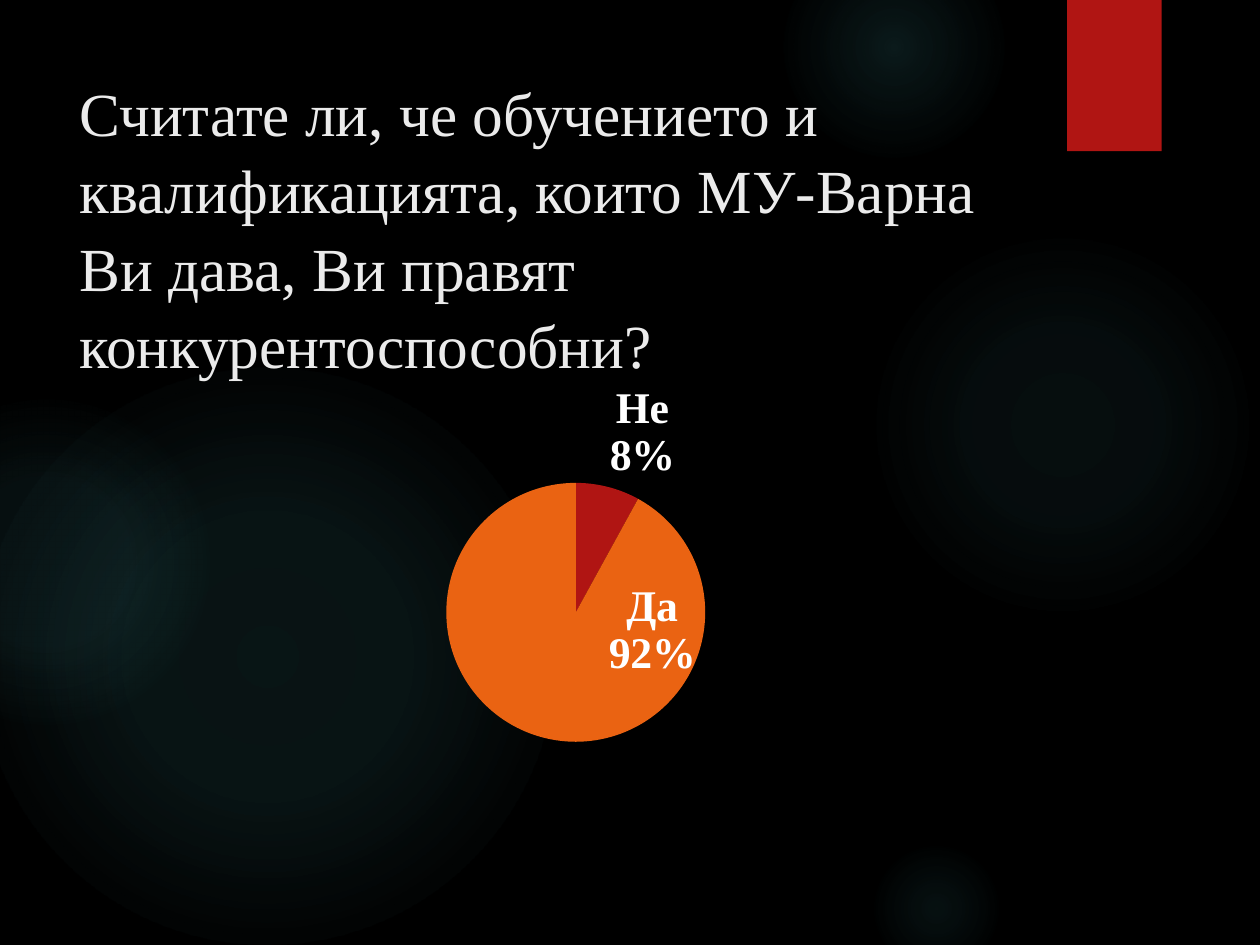
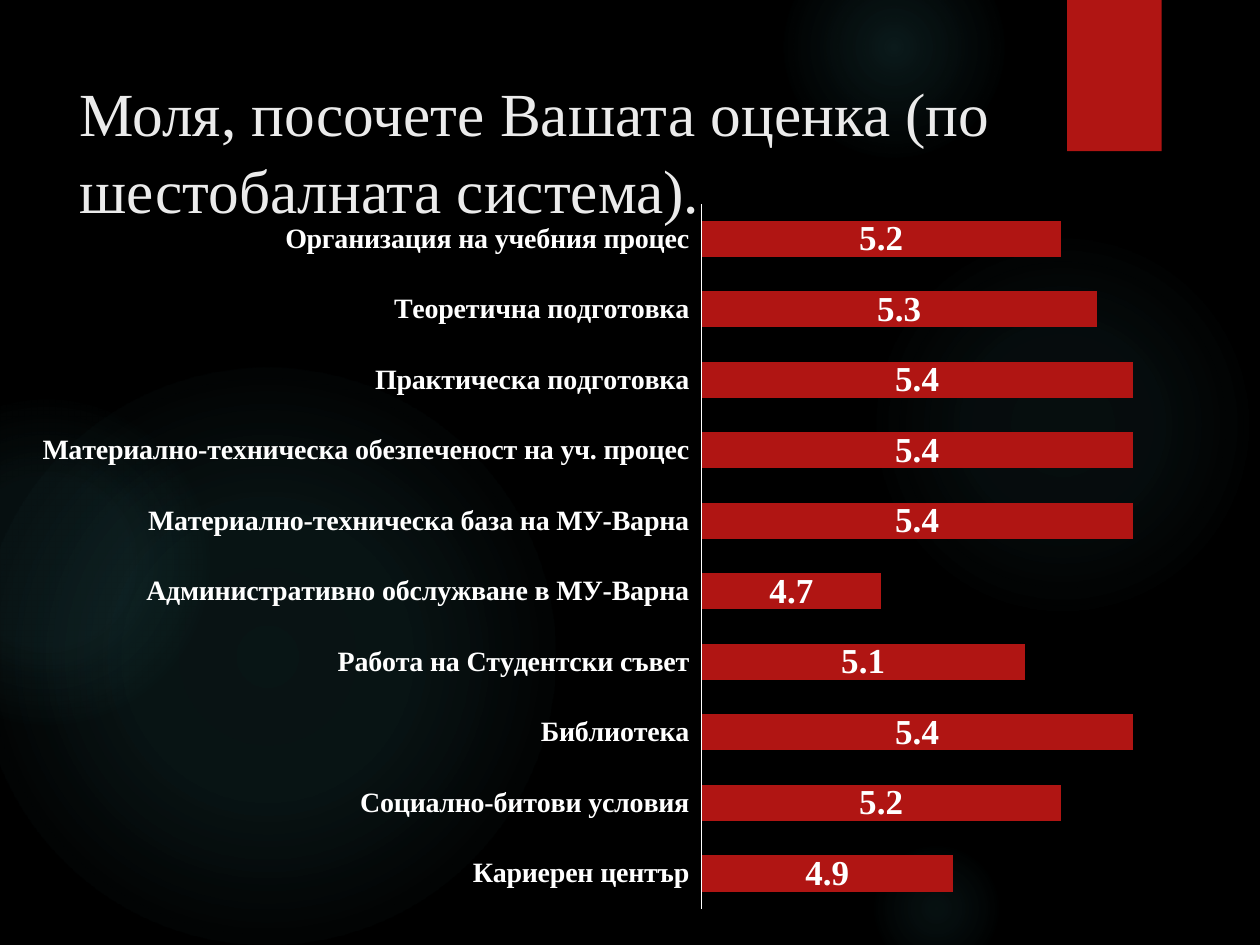
from pptx import Presentation
from pptx.chart.data import CategoryChartData
from pptx.dml.color import RGBColor
from pptx.enum.chart import XL_CHART_TYPE, XL_LABEL_POSITION, XL_TICK_LABEL_POSITION, XL_TICK_MARK
from pptx.enum.shapes import MSO_SHAPE
from pptx.enum.text import MSO_ANCHOR, MSO_AUTO_SIZE, PP_ALIGN
from pptx.oxml import parse_xml
from pptx.oxml.ns import nsdecls, qn
from pptx.util import Inches, Pt

COLORS = {
    "background": "000000",
    "glow": "50B9C1",
    "red": "B01513",
    "orange": "EA6312",
    "title": "EBEBEB",
    "white": "FFFFFF",
}
TITLE_FONT = "Times New Roman"
CHART_FONT = "TeX Gyre Adventor"


def write_text(text_frame, text, size, color, font_name, line_spacing):
    text_frame.text = text
    paragraph = text_frame.paragraphs[0]
    paragraph.alignment = PP_ALIGN.LEFT
    paragraph.line_spacing = line_spacing
    paragraph.font.size = Pt(size)
    paragraph.font.name = font_name
    paragraph.font.color.rgb = RGBColor.from_string(COLORS[color])


def layout_xml(x, y, width=None, height=None):
    """Manual chart layout; with a size it fixes the inner plot area."""
    parts = f'<c:x val="{x}"/><c:y val="{y}"/>'
    if width:
        parts = ('<c:layoutTarget val="inner"/><c:xMode val="edge"/><c:yMode val="edge"/>'
                 f'{parts}<c:w val="{width}"/><c:h val="{height}"/>')
    return parse_xml(f'<c:layout {nsdecls("c")}><c:manualLayout>{parts}</c:manualLayout></c:layout>')


presentation = Presentation()
presentation.slide_width = Inches(10)
presentation.slide_height = Inches(7.5)
layout = presentation.slide_layouts[5]
layout.background.fill.solid()
layout.background.fill.fore_color.rgb = RGBColor.from_string(COLORS["background"])

# Slides with their titles
titles = [
    "Считате ли, че обучението и квалификацията, които МУ-Варна Ви дава, Ви правят конкурентоспособни?",
    "Моля, посочете Вашата оценка (по шестобалната система).",
]
slides = []
for text in titles:
    slide = presentation.slides.add_slide(layout)
    title = slide.shapes.title
    title.left, title.top, title.width, title.height = map(Inches, (0.53, 0.52, 7.72, 1.53))
    title.text_frame.word_wrap = True
    title.text_frame.auto_size = MSO_AUTO_SIZE.NONE
    title.text_frame.vertical_anchor = MSO_ANCHOR.TOP
    write_text(title.text_frame, text, size=35, color="title", font_name=TITLE_FONT, line_spacing=1.05)
    slides.append(slide)
pie_slide, bar_slide = slides

# Shared decoration: glowing circles (left, top, diameter, opacity at centre and ring, end) and a red tab
glows = [
    (6.89, 1.83, 3.08, 7, 6, 69),
    (6.22, -0.5, 1.75, 14, 7, 73),
    (6.89, 6.67, 1.08, 9, 5, 66),
    (-0.17, 2.92, 4.58, 11, 10, 75),
    (-0.92, 3.17, 2.58, 8, 8, 72),
]
decoration = []
for left, top, diameter, centre, ring, end in glows:
    shape = pie_slide.shapes.add_shape(
        MSO_SHAPE.OVAL, Inches(left), Inches(top), Inches(diameter), Inches(diameter))
    stops = "".join(
        f'<a:gs pos="{position * 1000}"><a:srgbClr val="{COLORS["glow"]}">'
        f'<a:alpha val="{opacity * 1000}"/></a:srgbClr></a:gs>'
        for position, opacity in ((0, centre), (36, ring), (end, 0)))
    gradient = parse_xml(
        f'<a:gradFill {nsdecls("a")}><a:gsLst>{stops}</a:gsLst><a:path path="circle">'
        '<a:fillToRect l="50000" t="50000" r="50000" b="50000"/></a:path></a:gradFill>')
    shape._element.spPr.find(qn("a:prstGeom")).addnext(gradient)
    decoration.append(shape)

red_tab = pie_slide.shapes.add_shape(
    MSO_SHAPE.RECTANGLE, Inches(8.47), Inches(0), Inches(0.75), Inches(1.2))
red_tab.fill.solid()
red_tab.fill.fore_color.rgb = RGBColor.from_string(COLORS["red"])
decoration.append(red_tab)

# Move the decoration to the layout so that both slides show it
for number, shape in enumerate(decoration):
    shape.line.fill.background()
    shape.shadow.inherit = False
    shape._element.nvSpPr.cNvPr.set("id", str(20 + number))
    layout.shapes._spTree.append(shape._element)

# Pie chart
pie_data = CategoryChartData(number_format="General")
pie_data.categories = ["Не", "Да"]
pie_data.add_series("Series 1", (8, 92))
pie_chart = pie_slide.shapes.add_chart(
    XL_CHART_TYPE.PIE, Inches(0.9), Inches(2.92), Inches(7.34), Inches(3.92), pie_data).chart
pie_series = pie_chart.plots[0].series[0]
for index, color in enumerate(("red", "orange")):
    fill = pie_series.points[index].format.fill
    fill.solid()
    fill.fore_color.rgb = RGBColor.from_string(COLORS[color])

pie_labels = pie_series.data_labels
pie_labels.position = XL_LABEL_POSITION.OUTSIDE_END
pie_labels.number_format = "0%"
pie_labels.number_format_is_linked = False
yes_label = pie_series.points[1].data_label
yes_label.position = XL_LABEL_POSITION.CENTER
yes_font = yes_label.font
yes_element = pie_labels._element.find(qn("c:dLbl"))
yes_element.find(qn("c:idx")).addnext(layout_xml(0.1, -0.09))
for element in (pie_labels._element, yes_element):
    for tag, value in (("showVal", "0"), ("showCatName", "1"), ("showPercent", "1")):
        element.find(qn(f"c:{tag}")).set("val", value)
    separator = parse_xml(f'<c:separator {nsdecls("c")}>\n</c:separator>')
    element.find(qn("c:showBubbleSize")).addnext(separator)

# Bar chart of grades, listed from bottom to top
grades = {
    "Кариерен център": 4.9,
    "Социално-битови условия": 5.2,
    "Библиотека": 5.4,
    "Работа на Студентски съвет": 5.1,
    "Административно обслужване в МУ-Варна": 4.7,
    "Материално-техническа база на МУ-Варна": 5.4,
    "Материално-техническа обезпеченост на уч. процес": 5.4,
    "Практическа подготовка": 5.4,
    "Теоретична подготовка": 5.3,
    "Организация на учебния процес": 5.2,
}
bar_data = CategoryChartData(number_format="General")
bar_data.categories = list(grades)
bar_data.add_series("Series 1", list(grades.values()))
bar_chart = bar_slide.shapes.add_chart(
    XL_CHART_TYPE.BAR_STACKED, Inches(0.25), Inches(1.5), Inches(9.5), Inches(5.83), bar_data).chart
bar_plot = bar_chart.plots[0]
bar_plot.vary_by_categories = False
bar_plot.gap_width = 95
bar_plot.overlap = 100
bar_series = bar_plot.series[0]
bar_series.format.fill.solid()
bar_series.format.fill.fore_color.rgb = RGBColor.from_string(COLORS["red"])
bar_labels = bar_series.data_labels
bar_labels.show_value = True
bar_labels.position = XL_LABEL_POSITION.CENTER

value_axis = bar_chart.value_axis
value_axis.minimum_scale = 4.2
value_axis.maximum_scale = 5.6
value_axis.has_major_gridlines = False
value_axis.visible = False
category_axis = bar_chart.category_axis
category_axis.major_tick_mark = XL_TICK_MARK.NONE
category_axis.tick_label_position = XL_TICK_LABEL_POSITION.LOW
category_axis.format.line.color.rgb = RGBColor.from_string(COLORS["white"])
category_axis.format.line.width = Pt(0.75)

# Shared chart format: no title or legend, fixed plot area, white text
plot_areas = [(pie_chart, (0.36, 0.23, 0.28, 0.53)), (bar_chart, (0.56, 0.02, 0.42, 0.96))]
for chart, area in plot_areas:
    chart.has_title = False
    chart.has_legend = False
    chart.font.size = Pt(18)
    chart.font.name = CHART_FONT
    chart.font.color.rgb = RGBColor.from_string(COLORS["white"])
    plot_area = chart._chartSpace.chart.plotArea
    for old_layout in plot_area.findall(qn("c:layout")):
        plot_area.remove(old_layout)
    plot_area.insert(0, layout_xml(*area))

label_fonts = [(pie_labels.font, 25), (yes_font, 25), (bar_labels.font, 20), (category_axis.tick_labels.font, 16)]
for font, size in label_fonts:
    font.size = Pt(size)
    font.bold = True
    font.name = TITLE_FONT
    font.color.rgb = RGBColor.from_string(COLORS["white"])

presentation.save("out.pptx")
